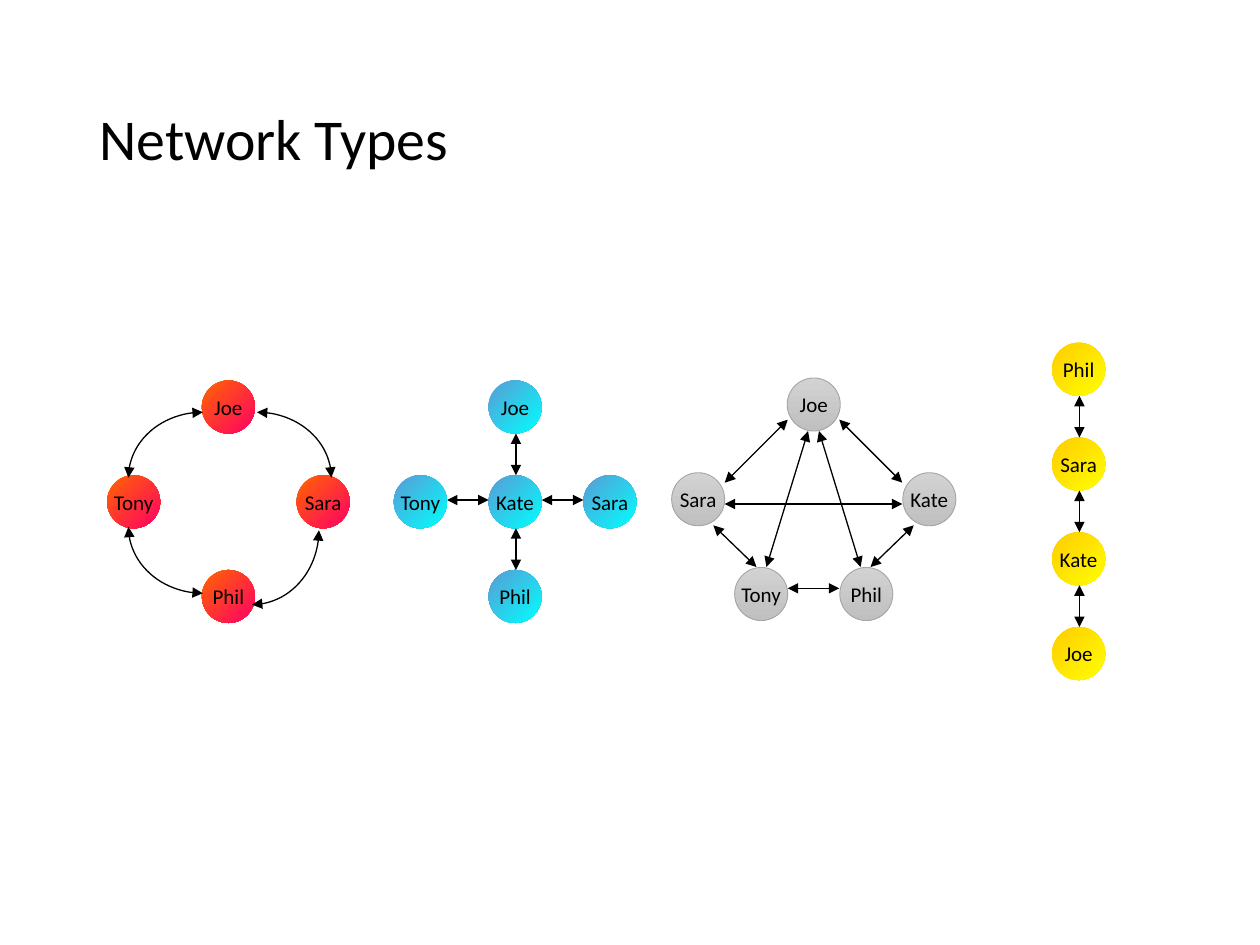
from math import cos, pi, sin

from lxml.etree import SubElement
from pptx import Presentation
from pptx.dml.color import RGBColor
from pptx.enum.shapes import MSO_CONNECTOR as Link, MSO_SHAPE as Shape
from pptx.enum.text import MSO_ANCHOR as Anchor, PP_ALIGN as Align
from pptx.oxml.ns import qn
from pptx.util import Cm, Pt

BLACK = RGBColor(0x00, 0x00, 0x00)
ORANGE, PINK = RGBColor(0xFF, 0x66, 0x00), RGBColor(0xFF, 0x00, 0x66)
BLUE, CYAN = RGBColor(0x5B, 0x9B, 0xD5), RGBColor(0x00, 0xFF, 0xFF)
LIGHT_GREY, GREY = RGBColor(0xD2, 0xD2, 0xD2), RGBColor(0xC0, 0xC0, 0xC0)
GREY_EDGE = RGBColor(0xA5, 0xA5, 0xA5)
GOLD, YELLOW = RGBColor(0xFF, 0xCC, 0x00), RGBColor(0xFF, 0xFF, 0x00)

FONT = "Calibri"
NODE = 1.07   # diameter of a person, in cm
STEP = 1.91   # distance between neighbouring people, in cm


def add_text(para, text, size):
    span = para.add_run()
    span.text = text
    span.font.name = FONT
    span.font.size = Pt(size)
    span.font.color.rgb = BLACK


def add_node(page, box, x, y, name, colours, angle=315, edge=None):
    left, top = box
    node = page.shapes.add_shape(
        Shape.OVAL, Cm(left + x), Cm(top + y), Cm(NODE), Cm(NODE))
    node.shadow.inherit = False
    node.fill.gradient()
    node.fill.gradient_angle = angle
    for stop, colour in zip(node.fill.gradient_stops, colours):
        stop.color.rgb = colour
    if edge is None:
        node.line.fill.background()
    else:
        node.line.color.rgb = edge
        node.line.width = Pt(0.5)
    frame = node.text_frame
    frame.word_wrap = False
    frame.vertical_anchor = Anchor.MIDDLE
    para = frame.paragraphs[0]
    para.alignment = Align.CENTER
    add_text(para, name, 12)


def style_arrow(arrow):
    """Thin black line with a triangle at both ends and no shadow."""
    arrow.line.color.rgb = BLACK
    arrow.line.width = Pt(0.75)
    properties = arrow.element.spPr
    outline = properties.find(qn("a:ln"))
    for end in ("a:headEnd", "a:tailEnd"):
        SubElement(outline, qn(end), type="triangle")
    SubElement(properties, qn("a:effectLst"))


def add_arrow(page, box, x1, y1, x2, y2):
    left, top = box
    style_arrow(page.shapes.add_connector(
        Link.STRAIGHT, Cm(left + x1), Cm(top + y1), Cm(left + x2), Cm(top + y2)))


def add_arc(page, box, x1, y1, x2, y2, parts=24):
    """Quarter ellipse that leaves its first point vertically."""
    left, top = box
    turns = [pi / 2 * i / parts for i in range(parts + 1)]
    points = [(Cm(left + x1 + (x2 - x1) * (1 - cos(turn))),
               Cm(top + y1 + (y2 - y1) * sin(turn))) for turn in turns]
    builder = page.shapes.build_freeform(*points[0])
    builder.add_line_segments(points[1:], close=False)
    arc = builder.convert_to_shape()
    arc.fill.background()
    style_arrow(arc)


def add_title(page, left, top, width, height):
    title = page.shapes.title
    title.left, title.top = Cm(left), Cm(top)
    title.width, title.height = Cm(width), Cm(height)
    title.text_frame.vertical_anchor = Anchor.MIDDLE
    para = title.text_frame.paragraphs[0]
    para.alignment = Align.LEFT
    para.line_spacing = 0.9
    add_text(para, "Network Types", 33)


def add_ring(page, box):
    people = [("Joe", 1, 0), ("Tony", 0, 1), ("Sara", 2, 1), ("Phil", 1, 2)]
    for name, column, row in people:
        add_node(page, box, column * STEP, row * STEP, name, (ORANGE, PINK))
    # Each arc runs from a side person to the top or bottom one
    for ends in [(4.27, 3.02, 2.92, 4.52), (0.43, 1.96, 1.93, 0.64),
                 (0.43, 2.95, 1.93, 4.29), (4.52, 1.96, 3.02, 0.64)]:
        add_arc(page, box, *ends)


def add_star(page, box):
    people = [("Joe", 1, 0), ("Kate", 1, 1), ("Tony", 0, 1),
              ("Sara", 2, 1), ("Phil", 1, 2)]
    for name, column, row in people:
        add_node(page, box, column * STEP, row * STEP, name, (BLUE, CYAN))
    for i in range(2):
        start, end = i * STEP + NODE, (i + 1) * STEP
        add_arrow(page, box, start, 2.41, end, 2.41)
        add_arrow(page, box, 2.46, start, 2.46, end)


def add_mesh(page, box):
    people = [("Joe", 2.33, 0), ("Sara", 0, 1), ("Kate", 4.66, 1),
              ("Tony", 1.27, 2), ("Phil", 3.39, 2)]
    for name, x, row in people:
        add_node(page, box, x, row * STEP, name, (LIGHT_GREY, GREY),
                 angle=270, edge=GREY_EDGE)
    # Slanted arrows come in pairs, mirrored about the middle
    span = 5.72
    for x1, y1, x2, y2 in [(3.38, 0.84, 4.65, 2.11), (4.88, 2.97, 4.01, 3.81),
                           (3.81, 3.81, 2.97, 1.07)]:
        add_arrow(page, box, x1, y1, x2, y2)
        add_arrow(page, box, span - x1, y1, span - x2, y2)
    # Level arrows
    for x, y in [(2.34, 4.24), (1.07, 2.54)]:
        add_arrow(page, box, x, y, span - x, y)


def add_chain(page, box):
    for row, name in enumerate(["Phil", "Sara", "Kate", "Joe"]):
        add_node(page, box, 0, row * STEP, name, (GOLD, YELLOW))
        if row:
            add_arrow(page, box, 0.55, (row - 1) * STEP + NODE, 0.55, row * STEP)


def main():
    deck = Presentation()
    deck.slide_width, deck.slide_height = Cm(25.4), Cm(19.05)
    page = deck.slides.add_slide(deck.slide_layouts[5])
    add_title(page, 1.75, 1.02, 21.9, 3.68)
    add_ring(page, (2.16, 7.67))
    add_star(page, (7.94, 7.67))
    add_mesh(page, (13.54, 7.62))
    add_chain(page, (21.21, 6.91))
    deck.save("out.pptx")


if __name__ == "__main__":
    main()
